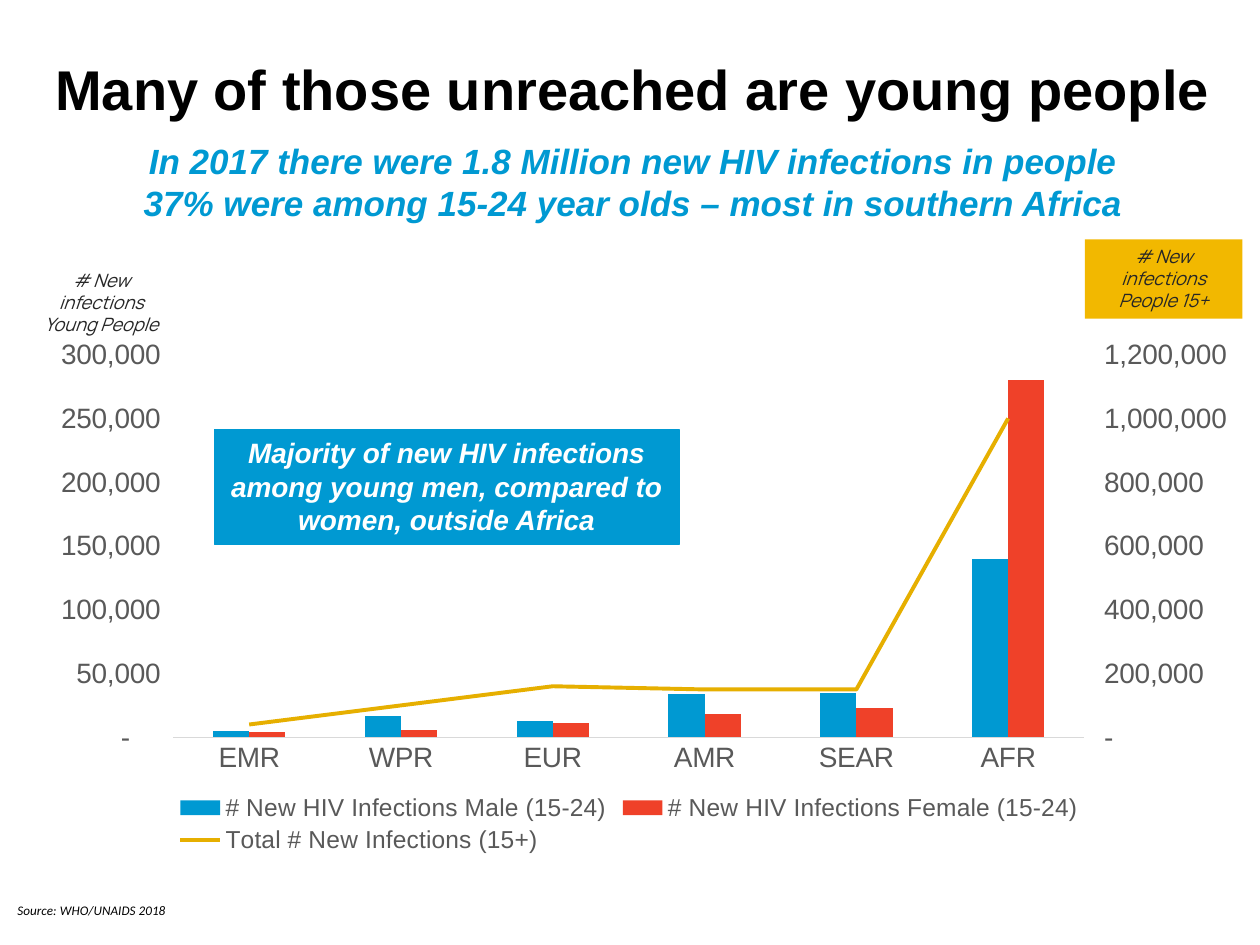
from copy import deepcopy
from dataclasses import dataclass

from pptx import Presentation
from pptx.chart.data import CategoryChartData
from pptx.dml.color import RGBColor
from pptx.enum.chart import XL_CHART_TYPE as ChartType
from pptx.enum.chart import XL_LEGEND_POSITION as LegendPosition
from pptx.enum.chart import XL_TICK_MARK as TickMark
from pptx.enum.shapes import MSO_SHAPE as Shape
from pptx.enum.text import MSO_ANCHOR as Anchor
from pptx.enum.text import PP_ALIGN as Align
from pptx.oxml import parse_xml
from pptx.oxml.ns import nsdecls, qn
from pptx.util import Inches, Pt

BLUE, RED, GOLD, AMBER = "0099D2", "EF4129", "E6AF00", "F2B800"
BLACK, WHITE, DARK, GREY, PALE = "000000", "FFFFFF", "262626", "595959", "D9D9D9"
NUMBERS = '_-* #,##0_-;\\-* #,##0_-;_-* "-"??_-;_-@_-'
REGIONS = ["EMR", "WPR", "EUR", "AMR", "SEAR", "AFR"]
LINE_PLOT = f"""<c:lineChart {nsdecls("c")}><c:grouping val="standard"/><c:varyColors val="0"/>
<c:marker val="1"/><c:axId val="5001"/><c:axId val="5002"/></c:lineChart>"""
HIDDEN_AXIS = f"""<c:catAx {nsdecls("c")}><c:axId val="5001"/>
<c:scaling><c:orientation val="minMax"/></c:scaling><c:delete val="1"/><c:axPos val="b"/>
<c:crossAx val="5002"/><c:crosses val="autoZero"/></c:catAx>"""
PLOT_LAYOUT = f"""<c:layout {nsdecls("c")}><c:manualLayout><c:layoutTarget val="inner"/>
<c:xMode val="edge"/><c:yMode val="edge"/><c:x val="0.128"/><c:y val="0.06"/>
<c:w val="0.743"/><c:h val="0.713"/></c:manualLayout></c:layout>"""


@dataclass
class Label:
    text: str
    left: float
    top: float
    width: float
    height: float
    size: float
    color: str
    font: str = "Arial"
    bold: bool = False
    italic: bool = True
    align: Align = Align.CENTER
    anchor: Anchor = Anchor.TOP
    fill: str | None = None
    line: str | None = None


@dataclass
class Series:
    name: str
    values: list[int]
    color: str


LABELS = [
    Label("Many of those unreached are young people", 0.19, 0.23, 9.67, 0.94, 32, BLACK,
          bold=True, italic=False, anchor=Anchor.MIDDLE),
    Label("In 2017 there were 1.8 Million new HIV infections in people\n"
          "37% were among 15-24 year olds – most in southern Africa",
          0.82, 1.06, 8.41, 0.77, 20, BLUE, bold=True),
    Label("# New infections\nYoung People", 0.13, 2.09, 1.35, 0.63, 10.5, DARK, "Manrope"),
    Label("# New infections\nPeople 15+", 8.61, 1.9, 1.25, 0.63, 10.5, DARK, "Manrope",
          fill=AMBER),
    Label("Majority of new HIV infections among young men, compared to women, outside Africa",
          1.7, 3.41, 3.69, 0.91, 16, WHITE, bold=True, fill=BLUE, line=BLUE),
    Label("Source: WHO/UNAIDS 2018", 0.04, 7.11, 1.5, 0.23, 7.5, BLACK, "Calibri",
          align=Align.LEFT),
]
SERIES = [
    Series("# New HIV Infections Male (15-24)", [5000, 17000, 13000, 34000, 35000, 140000], BLUE),
    Series("# New HIV Infections Female (15-24)", [4000, 6000, 11000, 18000, 23000, 280000], RED),
    Series("Total # New Infections (15+)",
           [40000, 100000, 160000, 150000, 150000, 1000000], GOLD),
]


def rgb(color: str) -> RGBColor:
    return RGBColor.from_string(color)


def style_font(font, size: float, color: str, name: str = "Arial") -> None:
    font.size, font.name = Pt(size), name
    font.color.rgb = rgb(color)


def add_label(page, label: Label) -> None:
    place = [Inches(n) for n in (label.left, label.top, label.width, label.height)]
    if label.fill:
        box = page.shapes.add_shape(Shape.RECTANGLE, *place)
        box.shadow.inherit = False
        box.fill.solid()
        box.fill.fore_color.rgb = rgb(label.fill)
        if label.line:
            box.line.color.rgb = rgb(label.line)
            box.line.width = Pt(0.75)
        else:
            box.line.fill.background()
    else:
        box = page.shapes.add_textbox(*place)
    frame = box.text_frame
    frame.word_wrap = True
    frame.vertical_anchor = label.anchor
    frame.text = label.text
    for para in frame.paragraphs:
        para.alignment = label.align
        for span in para.runs:
            style_font(span.font, label.size, label.color, label.font)
            span.font.bold, span.font.italic = label.bold, label.italic


def style_axes(chart) -> None:
    for axis in (chart.category_axis, chart.value_axis):
        axis.major_tick_mark = axis.minor_tick_mark = TickMark.NONE
        axis.has_major_gridlines = False
        style_font(axis.tick_labels.font, 16, GREY)
    chart.category_axis.format.line.color.rgb = rgb(PALE)
    chart.category_axis.format.line.width = Pt(0.75)
    values = chart.value_axis
    values.format.line.fill.background()
    values.minimum_scale, values.maximum_scale, values.major_unit = 0, 300000, 50000
    values.tick_labels.number_format = NUMBERS
    values.tick_labels.number_format_is_linked = False


def move_total_to_right_axis(chart) -> None:
    area = chart.plots[0]._element.getparent()
    bars = area.find(qn("c:barChart"))
    total = bars.findall(qn("c:ser"))[-1]
    lines = parse_xml(LINE_PLOT)
    for tag in ("c:invertIfNegative", "c:marker", "c:smooth"):
        for extra in total.findall(qn(tag)):
            total.remove(extra)
    total.find(qn("c:spPr")).addnext(
        parse_xml(f'<c:marker {nsdecls("c")}><c:symbol val="none"/></c:marker>'))
    total.append(parse_xml(f'<c:smooth {nsdecls("c")} val="0"/>'))
    lines.insert(2, total)
    bars.addnext(lines)

    left = area.find(qn("c:valAx"))
    right = deepcopy(left)
    settings = {"c:axId": "5002", "c:axPos": "r", "c:crossAx": "5001", "c:crosses": "max",
                "c:majorTickMark": "out", "c:majorUnit": "200000"}
    for tag, value in settings.items():
        right.find(qn(tag)).set("val", value)
    right.find(qn("c:scaling")).find(qn("c:max")).set("val", "1200000")
    left.addnext(right)
    right.addnext(parse_xml(HIDDEN_AXIS))


def add_infections_chart(page) -> None:
    data = CategoryChartData(number_format=NUMBERS)
    data.categories = REGIONS
    for series in SERIES:
        data.add_series(series.name, series.values)
    chart = page.shapes.add_chart(ChartType.COLUMN_CLUSTERED, Inches(0.13), Inches(2.56),
                                  Inches(9.73), Inches(4.26), data).chart
    style_font(chart.font, 16, BLACK)
    chart.has_title = False
    chart.has_legend = True
    chart.legend.position = LegendPosition.BOTTOM
    chart.legend.include_in_layout = False
    style_font(chart.legend.font, 14, GREY)
    style_axes(chart)
    plot = chart.plots[0]
    plot.gap_width, plot.overlap, plot.vary_by_categories = 219, 0, False
    *columns, total = plot.series
    for column, series in zip(columns, SERIES):
        column.format.fill.solid()
        column.format.fill.fore_color.rgb = rgb(series.color)
    total.format.line.color.rgb = rgb(SERIES[-1].color)
    total.format.line.width = Pt(2.25)
    area = plot._element.getparent()
    for layout in area.findall(qn("c:layout")):
        area.remove(layout)
    area.insert(0, parse_xml(PLOT_LAYOUT))
    move_total_to_right_axis(chart)


def main() -> None:
    """Build the slide on new HIV infections among young people."""
    deck = Presentation()
    deck.slide_width, deck.slide_height = Inches(10), Inches(7.5)
    page = deck.slides.add_slide(deck.slide_layouts[6])
    add_infections_chart(page)
    for label in LABELS:
        add_label(page, label)
    deck.save("out.pptx")


if __name__ == "__main__":
    main()
